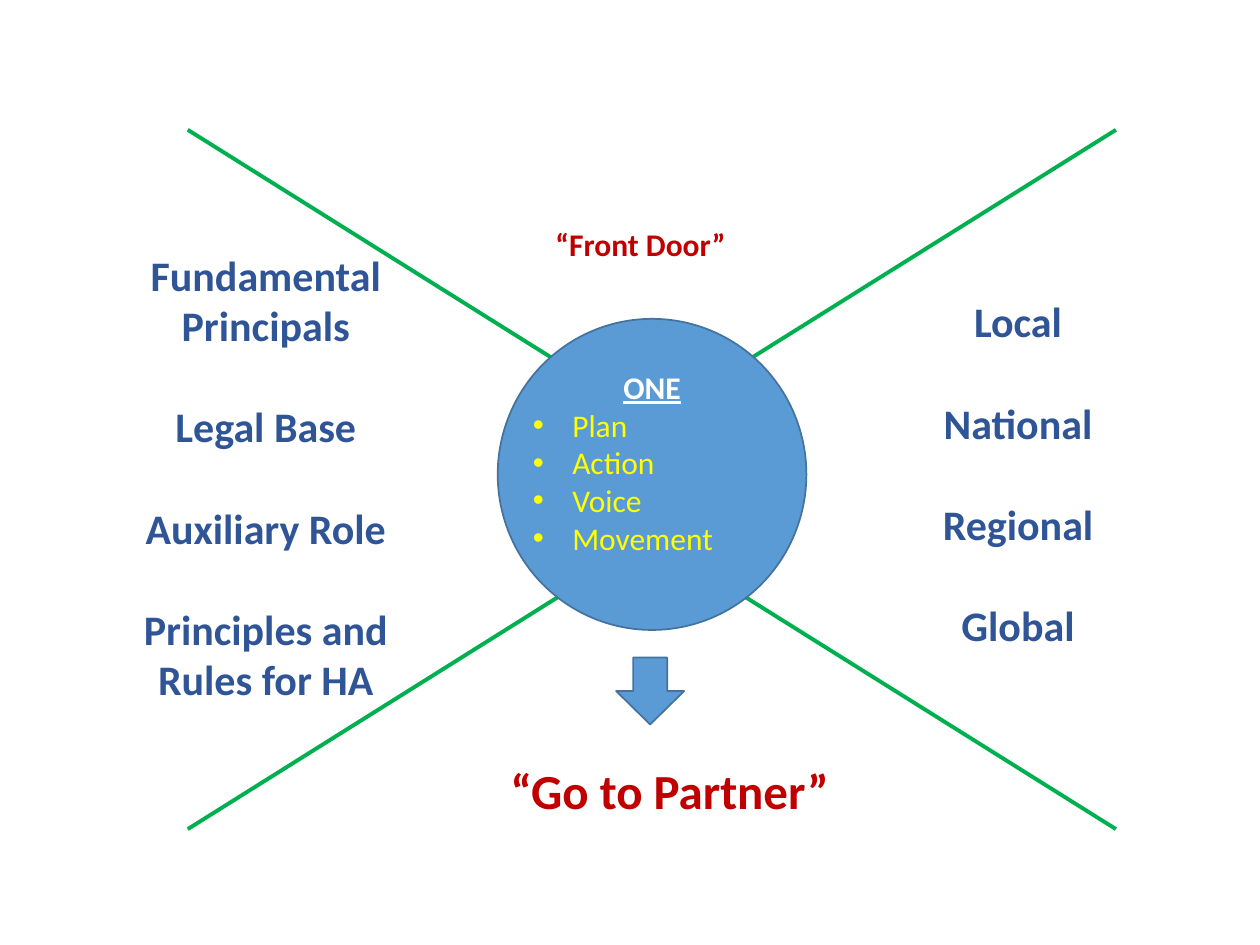
from lxml import etree
from pptx import Presentation
from pptx import util as u
from pptx.dml import color
from pptx.enum import shapes, text
from pptx.oxml import ns

Pt = u.Pt
COLORS = {"green": "00B050", "blue": "5B9BD5", "edge": "43739E", "navy": "2F5597",
          "red": "C00000", "yellow": "FFFF00", "white": "FFFFFF"}


def rgb(name):
    return color.RGBColor.from_string(COLORS[name])


def add_text(tf, content, size=24, fill="navy", bold=True, underline=False,
             bullet=False, gap=0):
    p = tf.paragraphs[0] if not tf.text else tf.add_paragraph()
    p.alignment = text.PP_ALIGN.LEFT if bullet else text.PP_ALIGN.CENTER
    p.space_before = Pt(gap)
    if bullet:
        pPr = p._p.get_or_add_pPr()
        pPr.set("marL", str(Pt(22.5)))
        pPr.set("indent", str(Pt(-22.5)))
        etree.SubElement(pPr, ns.qn("a:buFont")).set("typeface", "Arial")
        etree.SubElement(pPr, ns.qn("a:buChar")).set("char", "•")
    r = p.add_run()
    r.text = content
    r.font.name = "Calibri"
    r.font.size = Pt(size)
    r.font.bold = bold
    r.font.underline = underline
    r.font.color.rgb = rgb(fill)


prs = Presentation()
prs.slide_width, prs.slide_height = Pt(720), Pt(540)
s = prs.slides.add_slide(prs.slide_layouts[6])

for outer_x, inner_x in ((107.3, 323.3), (637.7, 421.5)):
    for outer_y, inner_y in ((74.2, 209.5), (473.8, 338.4)):
        line = s.shapes.add_connector(shapes.MSO_CONNECTOR.STRAIGHT, Pt(outer_x),
                                      Pt(outer_y), Pt(inner_x), Pt(inner_y))
        line.line.color.rgb = rgb("green")
        line.line.width = Pt(2.25)
        etree.SubElement(line._element.spPr, ns.qn("a:effectLst"))

for kind, box in ((shapes.MSO_SHAPE.OVAL, (284.4, 182.2, 176.4, 177.8)),
                  (shapes.MSO_SHAPE.DOWN_ARROW, (352.1, 375.8, 38.9, 38.2))):
    sp = s.shapes.add_shape(kind, *map(Pt, box))
    sp.shadow.inherit = False
    sp.fill.solid()
    sp.fill.fore_color.rgb = rgb("blue")
    sp.line.color.rgb = rgb("edge")
    sp.line.width = Pt(1)

one = [("ONE", dict(size=18, fill="white", underline=True))]
one += [(word, dict(size=18, fill="yellow", bold=False, bullet=True))
        for word in ("Plan", "Action", "Voice", "Movement")]
foundations = ("Fundamental Principals", "Legal Base", "Auxiliary Role",
               "Principles and Rules for HA")
levels = ("Local", "National", "Regional", "Global")
left, right = ([(word, dict(gap=29 if i else 0)) for i, word in enumerate(words)]
               for words in (foundations, levels))

for box, paragraphs in (
    ((297.4, 206.6, 150.5, 116.6), one),
    ((289.4, 125.3, 153.4, 28.8), [("“Front Door”", dict(size=18, fill="red"))]),
    ((260.6, 431.3, 244.1, 41), [("“Go to Partner”", dict(size=28, fill="red"))]),
    ((74.9, 139, 154.1, 269.3), left),
    ((504.7, 165.6, 154.1, 211), right),
):
    tf = s.shapes.add_textbox(*map(Pt, box)).text_frame
    tf.word_wrap = True
    for content, style in paragraphs:
        add_text(tf, content, **style)

prs.save("out.pptx")
